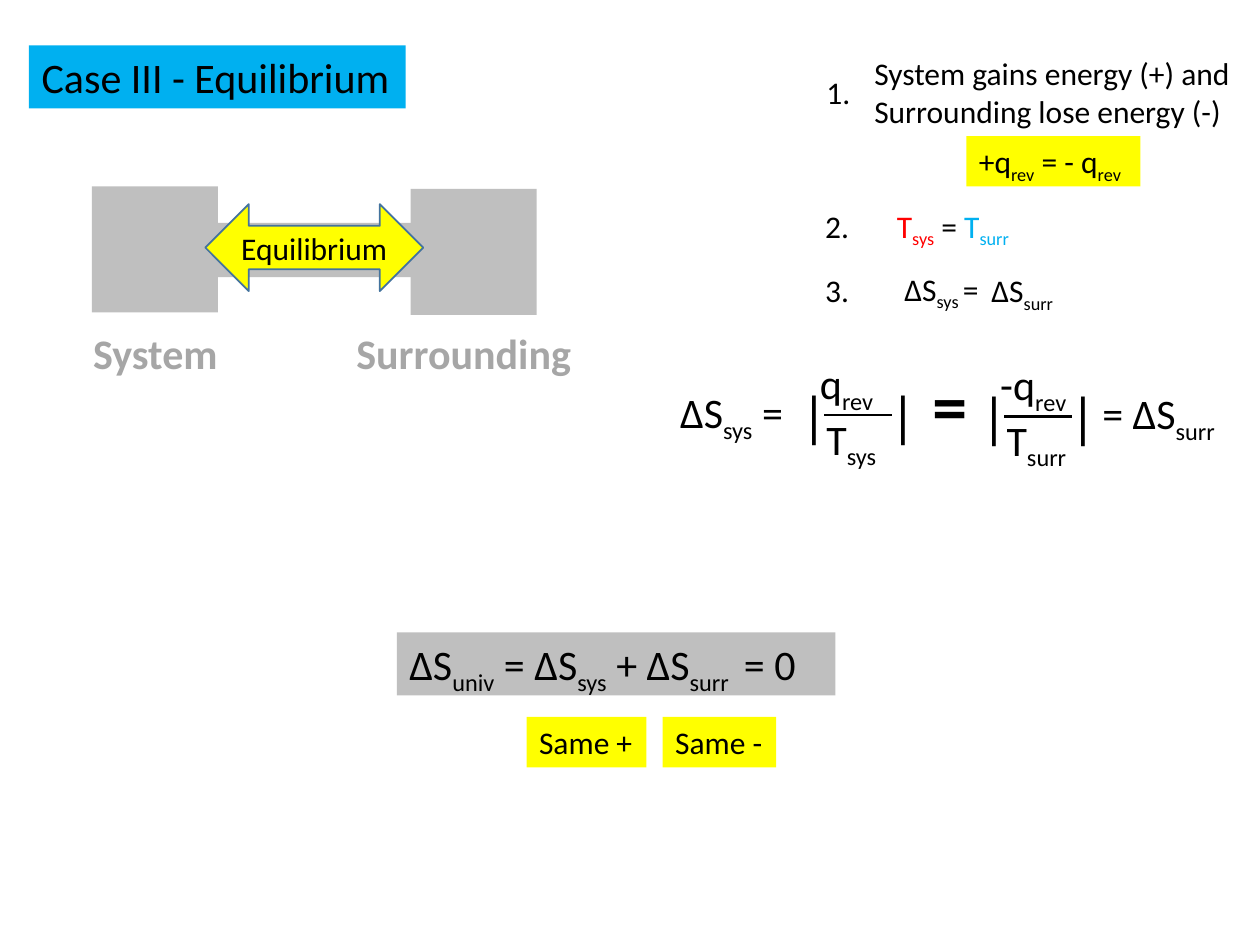
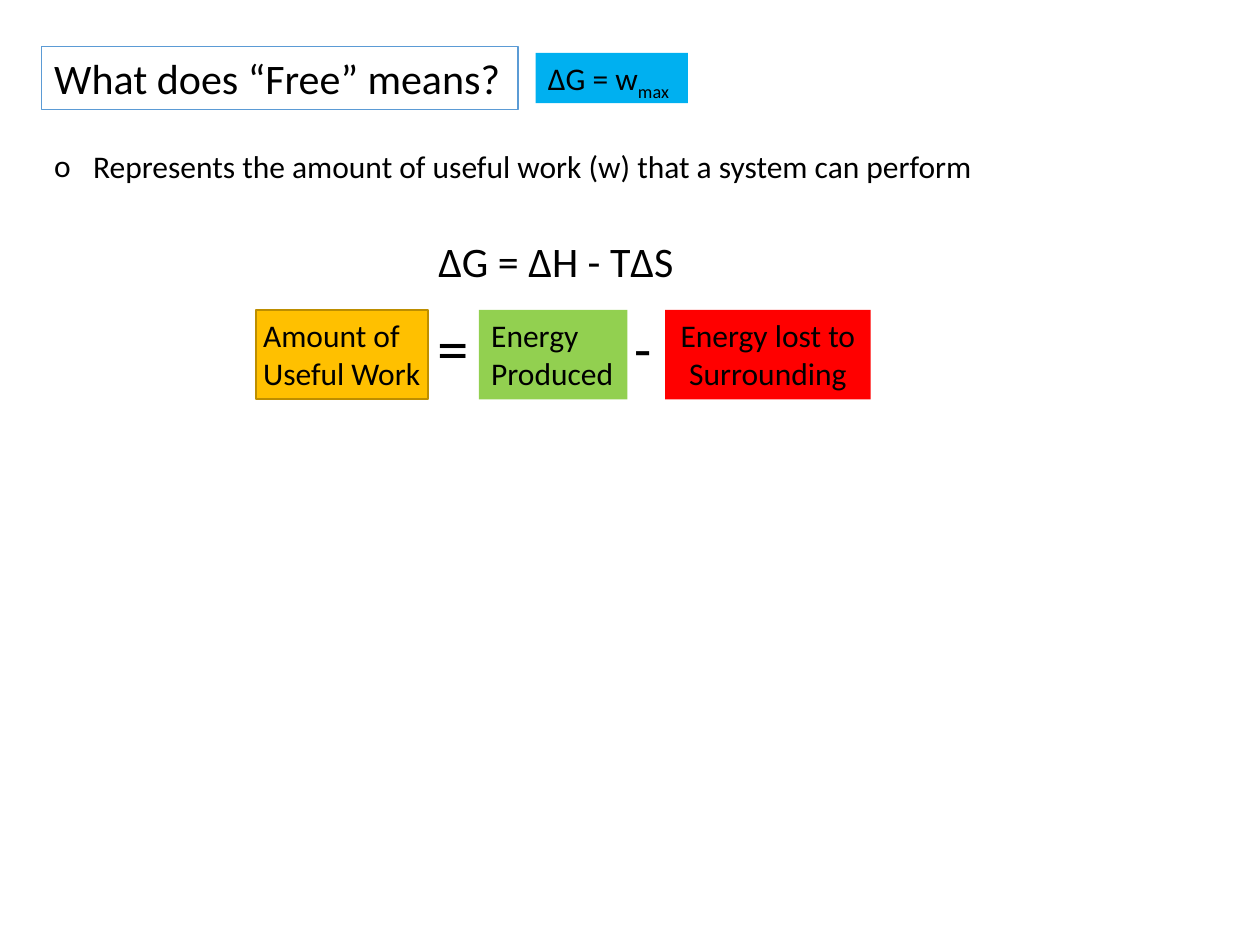
from lxml.etree import SubElement as Sub
from pptx import Presentation
from pptx.dml.color import RGBColor as Rgb
from pptx.enum.shapes import MSO_CONNECTOR as Conn, MSO_SHAPE as Geo
from pptx.enum.text import MSO_ANCHOR as Anchor, MSO_AUTO_SIZE as Fit, PP_ALIGN as Align
from pptx.oxml.ns import qn
from pptx.util import Inches, Pt

FONT = "Calibri"
HUES = {
    "black": "000000", "white": "FFFFFF", "sky": "00B0F0", "yellow": "FFFF00",
    "grey": "BFBFBF", "label": "A6A6A6", "edge": "43739E", "blue": "5B9BD5",
    "green": "92D050", "gold": "FFC000", "brown": "BD8E00", "red": "FF0000",
}
COLS, ROWS = 100, 75  # square grid cells over the whole slide
CELL = Inches(10) / COLS


def grid(*cells):
    return [round(CELL * cell) for cell in cells]


def hue(name):
    return Rgb.from_string(HUES[name])


def paint(shape, fill=None, line=None):
    if fill:
        shape.fill.solid()
        shape.fill.fore_color.rgb = hue(fill)
    if line:
        shape.line.color.rgb = hue(line)
        shape.line.width = Pt(1)
    else:
        shape.line.fill.background()


def add_runs(para, text):
    """Add text whose _marked_ parts are subscripts; a list holds (text, colour) pairs."""
    pairs = [(text, None)] if isinstance(text, str) else text
    for words, tint in pairs:
        for num, part in enumerate(words.split("_")):
            if not part:
                continue
            run = para.add_run()
            run.text = part
            if tint:
                run.font.color.rgb = hue(tint)
            if num % 2:
                run._r.get_or_add_rPr().set("baseline", "-25000")


def write(shape, text, size=18, color="black", bold=False, wrap=False,
          align=Align.LEFT, anchor=Anchor.TOP):
    frame = shape.text_frame
    frame.word_wrap = wrap
    frame.auto_size = Fit.NONE if wrap else Fit.SHAPE_TO_FIT_TEXT
    frame.vertical_anchor = anchor
    lines = text.split("\n") if isinstance(text, str) else [text]
    for num, line in enumerate(lines):
        para = frame.add_paragraph() if num else frame.paragraphs[0]
        add_runs(para, line)
        para.alignment = align
        para.space_before = Pt(0)
        font = para.font
        font.name, font.size, font.bold = FONT, Pt(size), bold
        font.color.rgb = hue(color)


def label(slide, at, text, **style):
    shape = slide.shapes.add_textbox(*grid(*at))
    write(shape, text, **style)
    return shape


def block(slide, at, fill, text=None, line=None, geo=Geo.RECTANGLE, **style):
    shape = slide.shapes.add_shape(geo, *grid(*at))
    shape.shadow.inherit = False
    paint(shape, fill, line)
    if text:
        write(shape, text, **style)


def place(shape, at, text, **style):
    """Move a placeholder to its cells and fill it, at a fixed size."""
    shape.left, shape.top, shape.width, shape.height = grid(*at)
    write(shape, text, wrap=True, **style)


def head(slide, at, text, fill, line=None):
    place(slide.shapes.title, at, text, size=24)
    paint(slide.shapes.title, fill, line)


def bullet(shape, mark):
    for para in shape.text_frame.paragraphs:
        props = para._p.get_or_add_pPr()
        props.set("marL", str(Inches(0.31)))
        props.set("indent", str(-Inches(0.31)))
        Sub(props, qn("a:buFont"), typeface=FONT)
        Sub(props, qn("a:buChar"), char=mark)


def ratio(slide, col, row, top, low, wide):
    """A fraction between two upright bars."""
    label(slide, (col, row, wide, 5), top, size=24)
    label(slide, (col + 0.5, row + 4.4, wide, 5), low, size=24)
    ends = grid(col + 1.3, row + 5.05, col + 6.7, row + 5.05)
    rule = slide.shapes.add_connector(Conn.STRAIGHT, *ends)
    rule.line.color.rgb = hue("black")
    rule.line.width = Pt(1.5)
    Sub(rule._element.spPr, qn("a:effectLst"))
    for side in (-1.5, 5.6):
        label(slide, (col + side, row + 1.8, 4, 6.4), "|", size=32)


def draw_bodies(slide):
    for at in ((7.3, 14.8, 10, 10), (32.6, 15, 10, 10), (17.2, 17.7, 15.6, 4.3)):
        block(slide, at, "grey")
    for col, wide, name in ((6.4, 12, "System"), (27.3, 19.2, "Surrounding")):
        label(slide, (col, 25.5, wide, 5), name, size=24, color="label", bold=True)
    block(slide, (16.3, 16.2, 17.3, 6.9), "yellow", "Equilibrium", "edge",
          Geo.LEFT_RIGHT_ARROW, wrap=True, align=Align.CENTER, anchor=Anchor.MIDDLE)


def draw_rules(slide):
    for num, (col, row) in enumerate(((64.6, 5.3), (64.5, 15.9), (64.5, 21)), 1):
        label(slide, (col, row, 3.9, 4), f"{num}.")
    label(slide, (68.4, 3.8, 30.5, 7.1),
          "System gains energy (+) and\nSurrounding lose energy (-)")
    block(slide, (76.7, 10.8, 13.8, 4), "yellow", "+q_rev_ = - q_rev_")
    label(slide, (70.2, 15.9, 11.3, 4),
          [("T_sys_", "red"), (" = ", "black"), ("T_surr_", "sky")])
    label(slide, (70.8, 20.9, 8.3, 4), "ΔS_sys _=")
    label(slide, (77.7, 21, 7.9, 4), "ΔS_surr_")


def draw_case(slide):
    head(slide, (2.3, 3.6, 29.9, 5), "Case III - Equilibrium", "sky")
    draw_bodies(slide)
    draw_rules(slide)
    label(slide, (53, 30.2, 11.4, 5), "ΔS_sys_ =", size=24)
    ratio(slide, 64.1, 27.9, "q_rev_", "T_sys_", 7)
    equal = label(slide, (73, 29.1, 4.8, 7.7), "=", size=40, bold=True)
    equal.rotation = 180
    ratio(slide, 78.4, 28, "-q_rev_", "T_surr_", 8)
    label(slide, (86.5, 30.3, 12.3, 5), "= ΔS_surr_", size=24)
    block(slide, (31.5, 50.2, 34.8, 5), "grey",
          "ΔS_univ_ = ΔS_sys_ + ΔS_surr _ = 0", size=24)
    for col, wide, sign in ((41.8, 9.5, "+"), (52.6, 9, "-")):
        block(slide, (col, 56.9, wide, 4), "yellow", f"Same {sign}")


def draw_free(slide):
    head(slide, (3.3, 3.7, 37.8, 5), "What does “Free” means?", "white", "blue")
    block(slide, (42.5, 4.2, 12.1, 4), "sky", "ΔG = w_max_")
    body = slide.placeholders[1]
    place(body, (3.3, 11.2, 75.7, 4),
          "Represents the amount of useful work (w) that a system can perform")
    bullet(body, "o")
    label(slide, (33.8, 18.2, 20.8, 5), "ΔG = ΔH - TΔS", size=24)
    top, high = 24.6, 7.1
    block(slide, (20.3, top, 13.7, high), "gold", line="brown")
    label(slide, (19.9, top, 16.3, high), "Amount of Useful Work", wrap=True)
    label(slide, (33.7, 24, 4.5, 7.1), "=", size=36)
    block(slide, (38, top, 11.8, high), "green", "Energy\nProduced")
    label(slide, (49.4, 24.4, 3.4, 6.4), "-", size=32)
    block(slide, (52.8, top, 16.3, high), "red", "Energy lost to Surrounding",
          wrap=True, align=Align.CENTER)


def main():
    deck = Presentation()
    deck.slide_width, deck.slide_height = grid(COLS, ROWS)
    title_only, content = deck.slide_layouts[5], deck.slide_layouts[1]
    draw_case(deck.slides.add_slide(title_only))
    draw_free(deck.slides.add_slide(content))
    deck.save("out.pptx")


if __name__ == "__main__":
    main()
